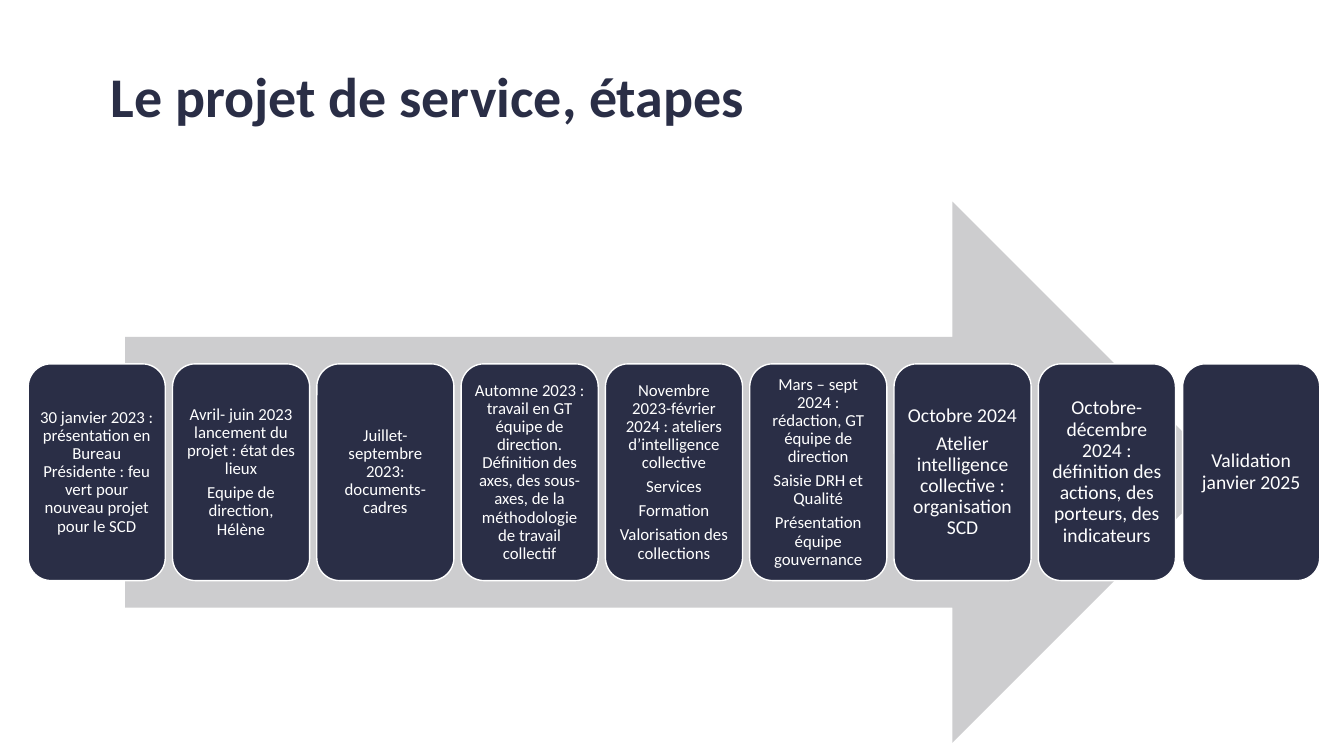
from dataclasses import dataclass

from pptx import Presentation
from pptx.dml.color import RGBColor
from pptx.enum.shapes import MSO_SHAPE
from pptx.enum.text import MSO_ANCHOR, PP_ALIGN
from pptx.slide import Slide
from pptx.util import Inches, Pt

RIGHT_ARROW = MSO_SHAPE.RIGHT_ARROW
ROUNDED = MSO_SHAPE.ROUNDED_RECTANGLE
MIDDLE = MSO_ANCHOR.MIDDLE
LEFT = PP_ALIGN.LEFT
CENTER = PP_ALIGN.CENTER


@dataclass(frozen=True)
class Theme:
    font: str = "Calibri"
    navy: RGBColor = RGBColor(0x2A, 0x2E, 0x46)
    grey: RGBColor = RGBColor(0xCD, 0xCD, 0xCF)
    white: RGBColor = RGBColor(0xFF, 0xFF, 0xFF)
    title_size: int = 40
    small_size: int = 12
    large_size: int = 14
    line_spacing: float = 0.9
    paragraph_gap: float = 0.35


@dataclass(frozen=True)
class Step:
    paragraphs: tuple[str, ...]
    size: int
    inset: float = 0.05


THEME = Theme()
FIRST_LEFT, LAST_LEFT = 0.28, 11.73
STEP_TOP, STEP_WIDTH, STEP_HEIGHT = 3.61, 1.36, 2.15

STEPS = (
    Step(("30 janvier 2023 : présentation en Bureau Présidente : feu vert "
          "pour nouveau projet pour le SCD",), THEME.small_size),
    Step(("Avril- juin 2023 lancement du projet : état des lieux",
          "Equipe de direction, Hélène"), THEME.small_size),
    Step(("Juillet-septembre 2023: documents- cadres",), THEME.small_size),
    Step(("Automne 2023 : travail en GT équipe de direction. Définition des axes, "
          "des sous-axes, de la méthodologie de travail collectif",), THEME.small_size),
    Step(("Novembre 2023-février 2024 : ateliers d’intelligence collective",
          "Services", "Formation", "Valorisation des collections"), THEME.small_size),
    Step(("Mars – sept 2024 : rédaction, GT équipe de direction",
          "Saisie DRH et Qualité", "Présentation équipe gouvernance"), THEME.small_size),
    Step(("Octobre 2024", "Atelier intelligence collective : organisation SCD"),
         THEME.large_size, 0.06),
    Step(("Octobre-décembre 2024 : définition des actions, des porteurs, "
          "des indicateurs",), THEME.large_size, 0.06),
    Step(("Validation janvier 2025",), THEME.large_size, 0.06),
)


def add_title(slide: Slide, wording: str) -> None:
    title = slide.shapes.title
    title.left, title.top = Inches(1), Inches(0.26)
    title.width, title.height = Inches(11.5), Inches(1.45)
    title.text_frame.text = wording
    title.text_frame.vertical_anchor = MIDDLE
    heading = title.text_frame.paragraphs[0]
    heading.alignment = LEFT
    heading.line_spacing = THEME.line_spacing
    font = heading.runs[0].font
    font.name, font.size, font.bold = THEME.font, Pt(THEME.title_size), True
    font.color.rgb = THEME.navy


def add_progress_arrow(slide: Slide) -> None:
    arrow = slide.shapes.add_shape(
        RIGHT_ARROW, Inches(1.24), Inches(2), Inches(10.89), Inches(5.37))
    arrow.shadow.inherit = False
    arrow.fill.solid()
    arrow.fill.fore_color.rgb = THEME.grey
    arrow.line.fill.background()


def add_step(slide: Slide, step: Step, left: float) -> None:
    card = slide.shapes.add_shape(
        ROUNDED, Inches(left), Inches(STEP_TOP), Inches(STEP_WIDTH), Inches(STEP_HEIGHT))
    card.shadow.inherit = False
    card.fill.solid()
    card.fill.fore_color.rgb = THEME.navy
    card.line.color.rgb = THEME.white
    card.line.width = Pt(1)
    frame = card.text_frame
    frame.word_wrap = True
    frame.vertical_anchor = MIDDLE
    frame.margin_left = frame.margin_right = Inches(step.inset)
    frame.margin_top = frame.margin_bottom = Inches(step.inset)
    frame.text = "\n".join(step.paragraphs)
    for paragraph in frame.paragraphs:
        paragraph.alignment = CENTER
        paragraph.line_spacing = THEME.line_spacing
        paragraph.space_after = Pt(THEME.paragraph_gap * step.size)
        font = paragraph.runs[0].font
        font.name, font.size = THEME.font, Pt(step.size)
        font.color.rgb = THEME.white


def main() -> None:
    deck = Presentation()
    deck.slide_width, deck.slide_height = Inches(13.33), Inches(7.5)
    slide = deck.slides.add_slide(deck.slide_layouts[5])
    add_title(slide, "Le projet de service, étapes")
    add_progress_arrow(slide)
    pitch = (LAST_LEFT - FIRST_LEFT) / (len(STEPS) - 1)
    for index, step in enumerate(STEPS):
        add_step(slide, step, FIRST_LEFT + index * pitch)
    deck.save("out.pptx")


if __name__ == "__main__":
    main()
